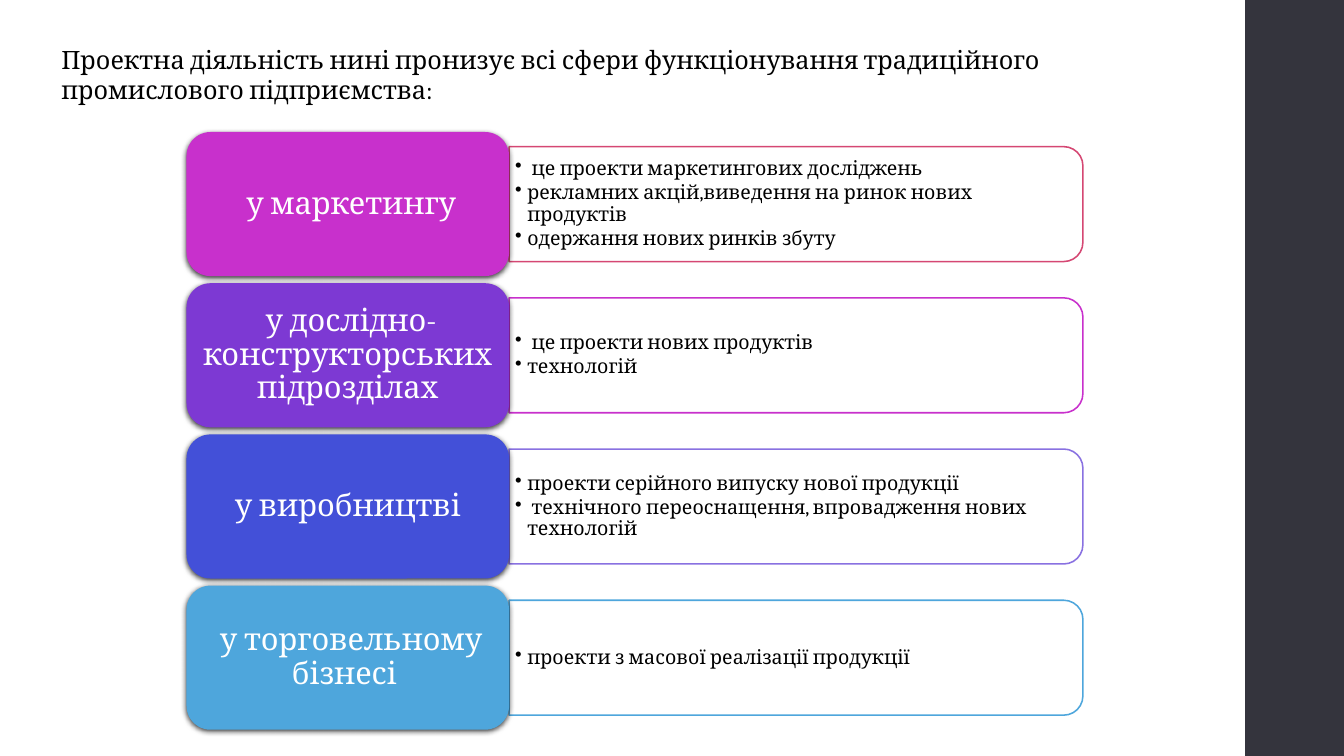
from typing import NamedTuple

from lxml import etree
from pptx import Presentation
from pptx.dml.color import RGBColor
from pptx.enum import shapes, text
from pptx.oxml import ns
from pptx.util import Inches, Pt

FONT = "Cambria"
BLACK = RGBColor(0x00, 0x00, 0x00)
WHITE = RGBColor(0xFF, 0xFF, 0xFF)
SLATE = RGBColor(0x34, 0x34, 0x3D)
CRIMSON = RGBColor(0xD5, 0x47, 0x73)
MAGENTA = RGBColor(0xC8, 0x30, 0xCC)
VIOLET = RGBColor(0x7D, 0x39, 0xD3)
LAVENDER = RGBColor(0x89, 0x71, 0xE1)
INDIGO = RGBColor(0x43, 0x50, 0xD8)
SKY = RGBColor(0x4E, 0xA6, 0xDC)

CARD_LEFT, CARD_TOP, CARD_WIDTH, CARD_HEIGHT = 1.85, 1.31, 3.2, 1.43
ROW_PITCH = 1.5
PANEL_LEFT, PANEL_WIDTH, PANEL_HEIGHT = CARD_LEFT + CARD_WIDTH, 5.69, 1.14
BULLETS_WIDTH, BULLETS_HEIGHT = 5.63, 1.03

HEADING = ("Проектна діяльність нині пронизує всі сфери функціонування "
           "традиційного промислового підприємства:")


class Sphere(NamedTuple):
    name: str
    fill: RGBColor
    outline: RGBColor
    projects: tuple[str, ...]


SPHERES = (
    Sphere(" у маркетингу", MAGENTA, CRIMSON,
           (" це проекти маркетингових досліджень",
            "рекламних акцій,виведення на ринок нових продуктів",
            "одержання нових ринків збуту")),
    Sphere(" у дослідно-конструкторських підрозділах", VIOLET, MAGENTA,
           (" це проекти нових продуктів", "технологій")),
    Sphere("у виробництві", INDIGO, LAVENDER,
           ("проекти серійного випуску нової продукції",
            " технічного переоснащення, впровадження нових технологій")),
    Sphere(" у торговельному бізнесі ", SKY, SKY,
           ("проекти з масової реалізації продукції",)),
)


def add_run(paragraph, words: str, size: float, color: RGBColor) -> None:
    run = paragraph.add_run()
    run.text = words
    run.font.name = FONT
    run.font.size = Pt(size)
    run.font.color.rgb = color


def set_frame(frame, side: float, end: float) -> None:
    """Wrap the text, centre it vertically and set its insets."""
    frame.word_wrap = True
    frame.vertical_anchor = text.MSO_ANCHOR.MIDDLE
    frame.margin_left = frame.margin_right = Inches(side)
    frame.margin_top = frame.margin_bottom = Inches(end)


def add_bullet(paragraph) -> None:
    properties = paragraph._p.get_or_add_pPr()
    properties.set("marL", str(Inches(0.12)))
    properties.set("indent", str(-Inches(0.12)))
    etree.SubElement(properties, ns.qn("a:buChar")).set("char", "•")


def add_drop_shadow(shape) -> None:
    effects = shape._element.spPr.find(ns.qn("a:effectLst"))
    shadow = etree.SubElement(effects, ns.qn("a:outerShdw"), blurRad=str(Pt(4)),
                              dist=str(Pt(1.2)), dir="5400000", rotWithShape="0")
    color = etree.SubElement(shadow, ns.qn("a:srgbClr"), val="000000")
    etree.SubElement(color, ns.qn("a:alpha"), val="75000")


def add_filled(slide, kind, left: float, top: float, width: float, height: float,
               fill: RGBColor):
    shape = slide.shapes.add_shape(kind, Inches(left), Inches(top),
                                   Inches(width), Inches(height))
    shape.fill.solid()
    shape.fill.fore_color.rgb = fill
    shape.line.fill.background()
    shape.shadow.inherit = False
    return shape


def add_panel(slide, sphere: Sphere, middle: float) -> None:
    """Outlined panel, turned so that its rounded corners face right."""
    panel = add_filled(slide, shapes.MSO_SHAPE.ROUND_2_SAME_RECTANGLE,
                       PANEL_LEFT + (PANEL_WIDTH - PANEL_HEIGHT) / 2,
                       middle - PANEL_WIDTH / 2, PANEL_HEIGHT, PANEL_WIDTH, WHITE)
    panel.rotation = 90
    panel.line.color.rgb = sphere.outline
    panel.line.width = Pt(1.1)

    bullets = slide.shapes.add_textbox(
        Inches(PANEL_LEFT), Inches(middle - BULLETS_HEIGHT / 2),
        Inches(BULLETS_WIDTH), Inches(BULLETS_HEIGHT)).text_frame
    set_frame(bullets, 0.06, 0.03)
    for index, project in enumerate(sphere.projects):
        paragraph = bullets.add_paragraph() if index else bullets.paragraphs[0]
        paragraph.level = 1
        paragraph.line_spacing = 0.9
        paragraph.space_after = Pt(2.1)
        add_bullet(paragraph)
        add_run(paragraph, project, 14, BLACK)


def add_card(slide, sphere: Sphere, top: float) -> None:
    card = add_filled(slide, shapes.MSO_SHAPE.ROUNDED_RECTANGLE,
                      CARD_LEFT, top, CARD_WIDTH, CARD_HEIGHT, sphere.fill)
    add_drop_shadow(card)
    set_frame(card.text_frame, 0.09, 0.05)
    label = card.text_frame.paragraphs[0]
    label.alignment = text.PP_ALIGN.CENTER
    label.line_spacing = 0.9
    add_run(label, sphere.name, 22, WHITE)


def main() -> None:
    deck = Presentation()
    deck.slide_width, deck.slide_height = Inches(13.33), Inches(7.5)
    slide = deck.slides.add_slide(deck.slide_layouts[6])

    add_filled(slide, shapes.MSO_SHAPE.RECTANGLE, 12.35, 0, 1, 7.5, SLATE)
    heading = slide.shapes.add_textbox(Inches(0.51), Inches(0.39),
                                       Inches(11.68), Inches(0.71)).text_frame
    heading.word_wrap = True
    add_run(heading.paragraphs[0], HEADING, 18, BLACK)

    for row, sphere in enumerate(SPHERES):
        top = CARD_TOP + row * ROW_PITCH
        add_panel(slide, sphere, top + CARD_HEIGHT / 2)
        add_card(slide, sphere, top)

    deck.save("out.pptx")


if __name__ == "__main__":
    main()
